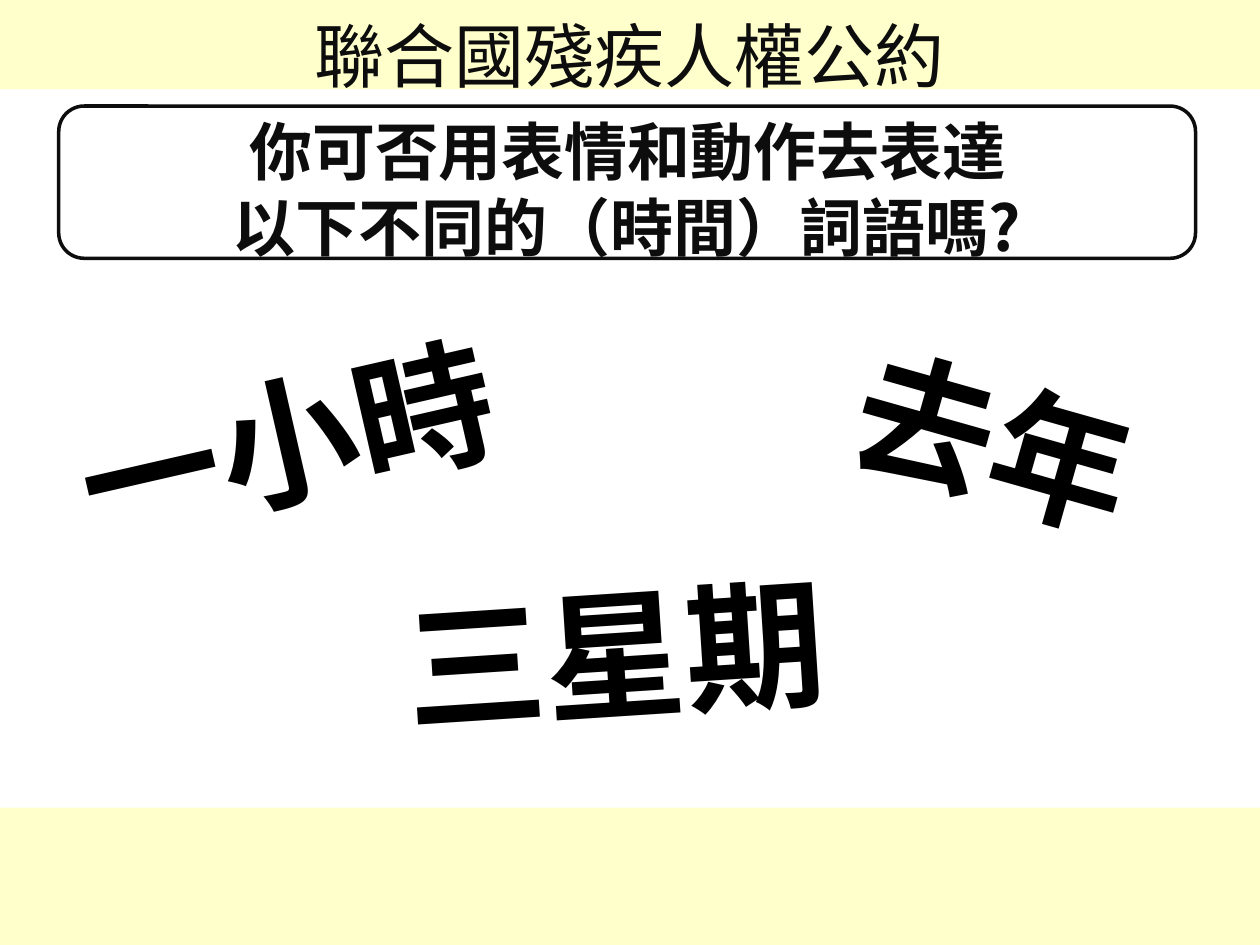
"""Build a slide asking pupils to act out three time expressions."""
from lxml import etree
from pptx import Presentation
from pptx.dml.color import RGBColor
from pptx.enum.shapes import MSO_SHAPE
from pptx.enum.text import MSO_ANCHOR, PP_ALIGN
from pptx.oxml.ns import qn
from pptx.util import Pt

RECTANGLE = MSO_SHAPE.RECTANGLE
ROUNDED = MSO_SHAPE.ROUNDED_RECTANGLE
TOP, MIDDLE = MSO_ANCHOR.TOP, MSO_ANCHOR.MIDDLE
LEFT, CENTER = PP_ALIGN.LEFT, PP_ALIGN.CENTER
FONT = "Noto Sans CJK SC"
COLORS = {"band": "FFFFCC", "panel": "FFFFFF", "ink": "0D0D0D", "word": "000000"}


def add_panel(kind, bounds, fill):
    shape = slide.shapes.add_shape(kind, *map(Pt, bounds))
    shape.shadow.inherit = False
    shape.fill.solid()
    shape.fill.fore_color.rgb = RGBColor.from_string(COLORS[fill])
    shape.line.fill.background()
    return shape


def write_text(shape, lines, size, color, bold, align, anchor, wrap):
    frame = shape.text_frame
    frame_format = {
        "word_wrap": wrap,
        "vertical_anchor": anchor,
        "margin_top": Pt(round(3.6 + 0.09 * size, 1)),
        "margin_bottom": 0,
    }
    for name, value in frame_format.items():
        setattr(frame, name, value)
    font_format = {"name": FONT, "size": Pt(size), "bold": bold}
    for index, line in enumerate(lines):
        paragraph = frame.paragraphs[0] if index == 0 else frame.add_paragraph()
        paragraph.alignment = align
        paragraph.line_spacing = Pt(round(1.2 * size, 1))
        run = paragraph.add_run()
        run.text = line
        for name, value in font_format.items():
            setattr(run.font, name, value)
        run.font.color.rgb = RGBColor.from_string(COLORS[color])
        east_asian = etree.SubElement(run.font._element, qn("a:ea"))
        east_asian.set("typeface", FONT)


presentation = Presentation()
presentation.slide_width, presentation.slide_height = Pt(720), Pt(540)
slide = presentation.slides.add_slide(presentation.slide_layouts[6])

for bounds in [(0, 461.5, 720, 78.5), (0, 0, 720, 51)]:
    add_panel(RECTANGLE, bounds, "band")

question = add_panel(ROUNDED, (33.6, 60.6, 649.6, 87), "panel")
question.line.color.rgb = RGBColor.from_string(COLORS["ink"])
question.line.width = Pt(2)
write_text(
    question,
    ["你可否用表情和動作去表達", "以下不同的（時間）詞語嗎?"],
    36, "ink", True, CENTER, MIDDLE, True,
)

title = slide.shapes.add_textbox(Pt(170.6), Pt(0), Pt(378), Pt(55.4))
write_text(title, ["聯合國殘疾人權公約"], 40, "ink", False, CENTER, TOP, False)

time_words = [
    ("一小時", 35.3, 192.2, 257, 347.1),
    ("三星期", 223.9, 313.9, 257, 356.3),
    ("去年", 483.1, 193, 176.4, 15.8),
]
for word, left, top, width, angle in time_words:
    box = slide.shapes.add_textbox(Pt(left), Pt(top), Pt(width), Pt(104.4))
    box.rotation = angle
    write_text(box, [word], 80, "word", True, LEFT, TOP, False)

presentation.save("out.pptx")
